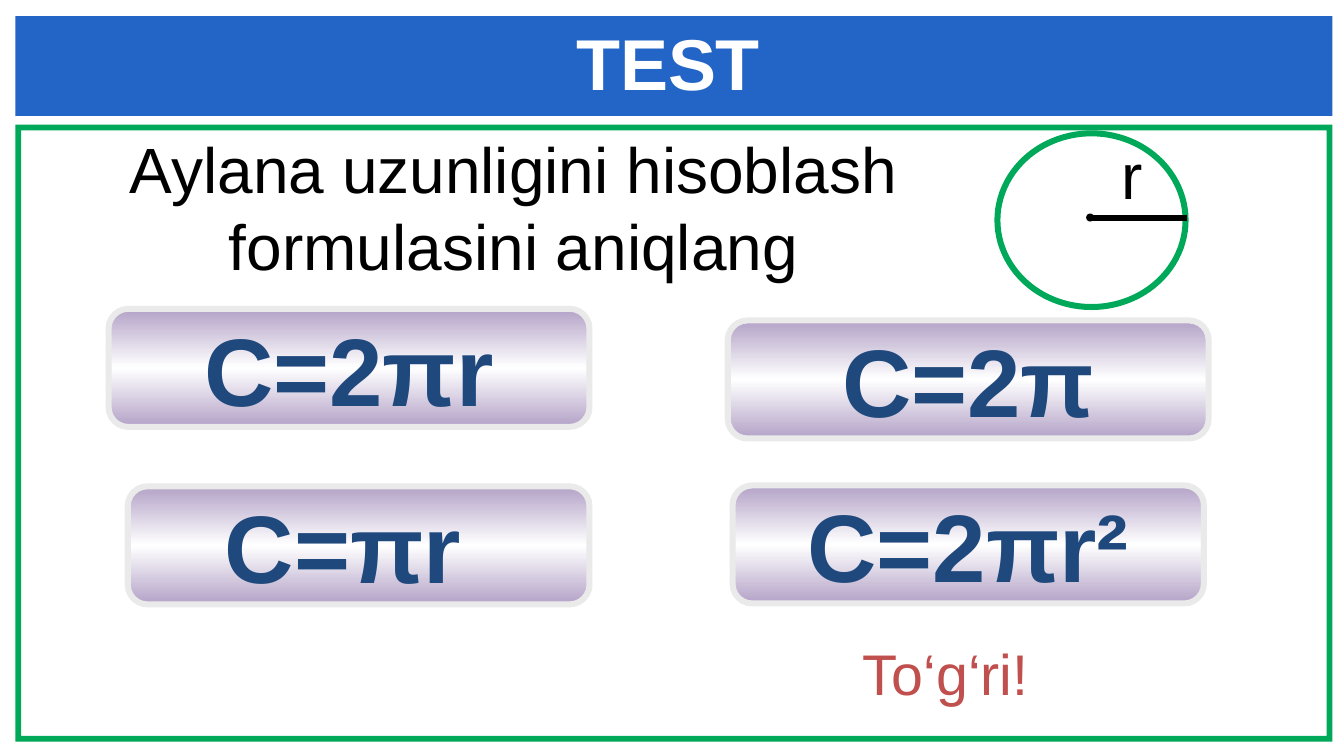
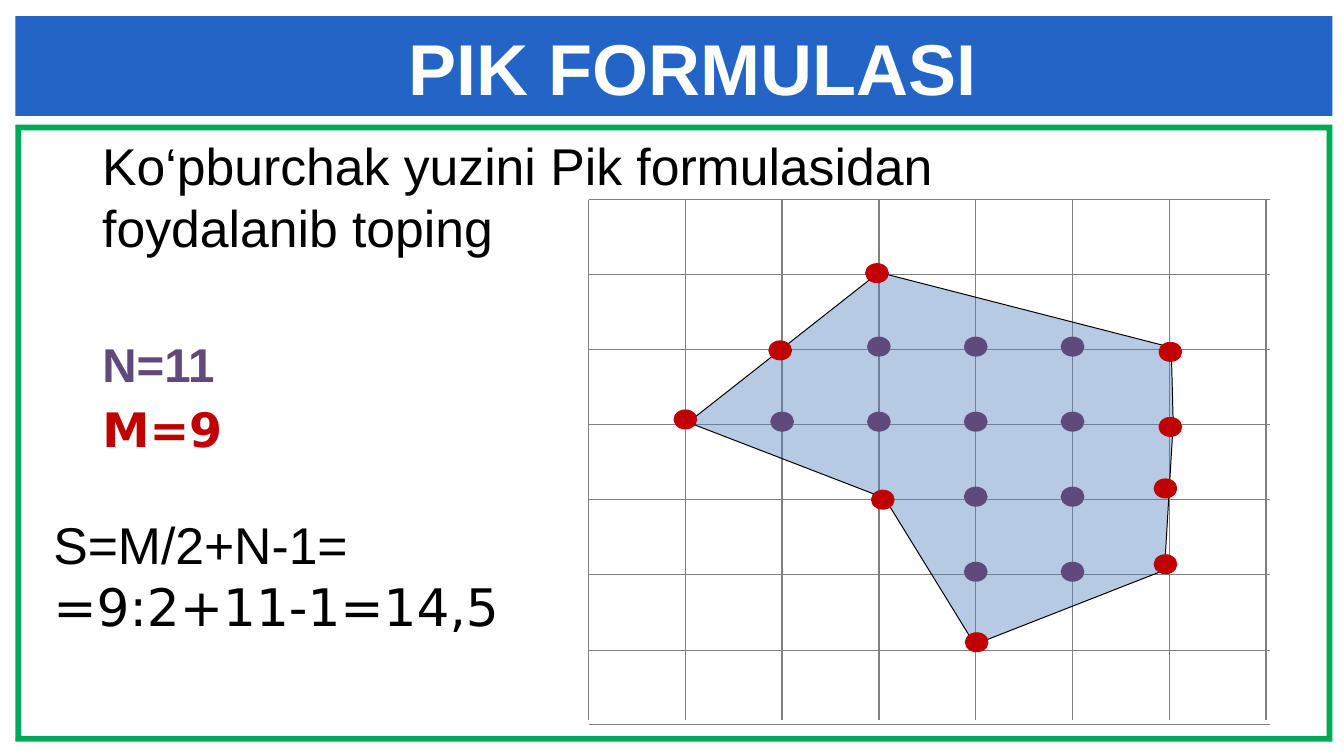
from collections import namedtuple
from dataclasses import dataclass

from lxml.etree import SubElement
from pptx import Presentation
from pptx.dml.color import RGBColor
from pptx.enum.shapes import MSO_CONNECTOR, MSO_SHAPE
from pptx.enum.text import MSO_ANCHOR, MSO_AUTO_SIZE, PP_ALIGN
from pptx.oxml import parse_xml
from pptx.oxml.ns import nsdecls, qn
from pptx.util import Pt

Box = namedtuple("Box", "left top width height")
Style = namedtuple("Style", "size color bold font", defaults=(False, "Arial"))


@dataclass(frozen=True)
class Theme:
    blue: str = "2365C7"
    green: str = "00A859"
    white: str = "FFFFFF"
    black: str = "000000"
    lilac: str = "B3A2C7"
    button_edge: str = "EAEAEA"
    navy: str = "1F497D"
    coral: str = "C0504D"
    grid: str = "808080"
    polygon: str = "4F81BD"
    inner: str = "604A7B"
    border: str = "C00000"
    title_size: float = 54
    question_size: float = 48
    answer_size: float = 72
    verdict_size: float = 43
    body_size: float = 38.8
    count_size: float = 35.6
    second_font: str = "DejaVu Sans"


THEME = Theme()
PAGE = Box(0, 0, 1008, 567.36)
BAND = Box(11.5, 12.2, 987.8, 74.9)
FRAME = Box(11.5, 93.6, 987.8, 463)
FRAME_THICKNESS = 4.3


def points(values):
    return [Pt(value) for value in values]


def paint(shape, fill=None, line=None, width=1):
    shape.shadow.inherit = False
    if fill:
        shape.fill.solid()
        shape.fill.fore_color.rgb = RGBColor.from_string(fill)
    if line:
        shape.line.color.rgb = RGBColor.from_string(line)
        shape.line.width = Pt(width)
    else:
        shape.line.fill.background()


def add_preset(page, kind, box, fill=None, line=None, width=1):
    shape = page.shapes.add_shape(kind, *points(box))
    paint(shape, fill, line, width)
    return shape


def add_line(page, start, end, color, width):
    line = page.shapes.add_connector(MSO_CONNECTOR.STRAIGHT, *points(start + end))
    line.line.color.rgb = RGBColor.from_string(color)
    line.line.width = Pt(width)
    SubElement(line.element.spPr, qn("a:effectLst"))


def write(shape, lines, align=PP_ALIGN.LEFT, anchor=MSO_ANCHOR.TOP, insets=(9, 4.3, 9, 4.3)):
    """Fill the shape with one paragraph for each (text, style) pair."""
    frame = shape.text_frame
    frame.word_wrap = True
    frame.auto_size = MSO_AUTO_SIZE.NONE
    frame.vertical_anchor = anchor
    (frame.margin_left, frame.margin_top,
     frame.margin_right, frame.margin_bottom) = points(insets)
    for index, (text, style) in enumerate(lines):
        para = frame.add_paragraph() if index else frame.paragraphs[0]
        para.text = text
        para.alignment = align
        para.font.name = style.font
        para.font.size = Pt(style.size)
        para.font.bold = style.bold
        para.font.color.rgb = RGBColor.from_string(style.color)


def add_text(page, box, lines, align=PP_ALIGN.LEFT):
    write(page.shapes.add_textbox(*points(box)), lines, align)


def add_page(deck, title, title_box, align, top_inset=0):
    """Add a title-only slide with the blue band and the green frame."""
    page = deck.slides.add_slide(deck.slide_layouts[5])
    frame = add_preset(page, MSO_SHAPE.FRAME, FRAME, THEME.green)
    frame.adjustments[0] = FRAME_THICKNESS / FRAME.height
    band = add_preset(page, MSO_SHAPE.RECTANGLE, BAND, THEME.blue)
    heading = page.shapes.title
    for backdrop in (frame, band):
        heading.element.addprevious(backdrop.element)
    heading.left, heading.top, heading.width, heading.height = points(title_box)
    write(heading, [(title, Style(THEME.title_size, THEME.white, True))],
          align, insets=(0, top_inset, 0, 0))
    return page


def add_answer(page, box, formula, indent=None):
    """Draw an answer button; an indent sets its text from the left."""
    button = add_preset(page, MSO_SHAPE.ROUNDED_RECTANGLE, box,
                        line=THEME.button_edge, width=4.5)
    button.adjustments[0] = 0.167
    stops = "".join(
        f'<a:gs pos="{place}"><a:srgbClr val="{color}"/></a:gs>'
        for place, color in ((0, THEME.lilac), (50000, THEME.white), (100000, THEME.lilac)))
    gradient = parse_xml(
        f'<a:gradFill {nsdecls("a")} rotWithShape="1"><a:gsLst>{stops}</a:gsLst>'
        '<a:lin ang="5400000" scaled="1"/></a:gradFill>')
    button.element.spPr.find(qn("a:prstGeom")).addnext(gradient)
    align = PP_ALIGN.LEFT if indent else PP_ALIGN.CENTER
    write(button, [(formula, Style(THEME.answer_size, THEME.navy, True))],
          align, MSO_ANCHOR.MIDDLE, (indent or 9, 4.3, 9, 4.3))


def draw_circle(page, box):
    """Draw the circle with its centre, radius and radius label."""
    middle_x = box.left + box.width / 2 - 1
    middle_y = box.top + box.height / 2 - 2
    add_preset(page, MSO_SHAPE.OVAL, box, THEME.white, THEME.green, 4.5)
    add_preset(page, MSO_SHAPE.OVAL, Box(middle_x - 2, middle_y - 2, 4, 4),
               THEME.black, THEME.black, 2)
    add_line(page, (middle_x, middle_y), (box.left + box.width + 1, middle_y),
             THEME.black, 4.5)
    add_text(page, Box(box.left + 84.2, box.top - 2.9, 36, 65.5),
             [("r", Style(THEME.question_size, THEME.black))])


def build_test(deck):
    page = add_page(deck, "TEST", Box(38.9, 10.8, 924.5, 68.4), PP_ALIGN.CENTER, 2.9)
    question = Style(THEME.question_size, THEME.black)
    add_text(page, Box(35.3, 92.9, 699.8, 125.3),
             [("Aylana uzunligini hisoblash", question),
              ("formulasini aniqlang", question)], PP_ALIGN.CENTER)
    add_answer(page, Box(81.4, 231.8, 360.7, 88.6), "C=2πr")
    add_answer(page, Box(545.8, 240.5, 360.7, 88.6), "C=2π")
    add_answer(page, Box(95.8, 365, 346.3, 88.6), "C=πr", indent=68.6)
    add_answer(page, Box(549.4, 364.3, 353.5, 88.6), "C=2πr²")
    add_text(page, Box(599.8, 474.5, 218.9, 55.4),
             [("To‘g‘ri!", Style(THEME.verdict_size, THEME.coral))], PP_ALIGN.CENTER)
    draw_circle(page, Box(748.1, 100.1, 141.1, 130.3))


def draw_lattice(page, box):
    """Draw the grid, the polygon and its lattice points inside the box."""
    step_x, step_y = 72.6, 56.3
    dot_width, dot_height = 15.8, 13
    row_widths = {6: 0.25}
    column_widths = {0: 0.75, 5: 0.25}
    outline = [(3, 0.97), (1.03, 2.97), (3.06, 3.98), (3.99, 5.93),
               (5.95, 4.94), (6.04, 2.98), (6.02, 1.97)]
    inner_rows = {2: (3, 4, 5), 3: (2, 3, 4, 5), 4: (4, 5), 5: (4, 5)}
    inner_dots = [(column, row - 0.04)
                  for row, columns in inner_rows.items() for column in columns]
    border_dots = [(2.98, 0.98), (1.98, 2.01), (1, 2.93), (3.04, 4), (4.01, 5.9),
                   (5.96, 4.86), (5.96, 3.85), (6.01, 3.03), (6.01, 2.03)]

    def locate(column, row):
        return box.left + column * step_x, box.top + row * step_y

    for row in range(8):
        left, y = locate(0, row)
        add_line(page, (left, y), (left + box.width, y), THEME.grid, row_widths.get(row, 1))
    for column in range(8):
        x, top = locate(column, 0)
        add_line(page, (x, top), (x, top + box.height), THEME.grid,
                 column_widths.get(column, 1))

    corners = [points(locate(*corner)) for corner in outline]
    builder = page.shapes.build_freeform(*corners[0])
    builder.add_line_segments(corners[1:], close=True)
    polygon = builder.convert_to_shape()
    paint(polygon, THEME.polygon, THEME.black, 0.75)
    tint = polygon.element.spPr.find(qn("a:solidFill")).find(qn("a:srgbClr"))
    SubElement(tint, qn("a:alpha"), val="41000")

    for dots, color in ((inner_dots, THEME.inner), (border_dots, THEME.border)):
        for dot in dots:
            x, y = locate(*dot)
            add_preset(page, MSO_SHAPE.OVAL,
                       Box(x - dot_width / 2, y - dot_height / 2, dot_width, dot_height),
                       color, color, 2)


def build_pick(deck):
    page = add_page(deck, "PIK FORMULASI", Box(306.7, 18, 504.7, 65.5), PP_ALIGN.LEFT)
    draw_lattice(page, Box(441.4, 149.8, 511.2, 390.2))
    body = Style(THEME.body_size, THEME.black)
    add_text(page, Box(67.7, 95.8, 787.7, 103.7),
             [("Ko‘pburchak yuzini Pik formulasidan foydalanib toping", body)])
    add_text(page, Box(67.7, 247, 322.6, 52.6),
             [("N=11", Style(THEME.count_size, THEME.inner, True))])
    add_text(page, Box(67.7, 295.9, 259.9, 52.6),
             [("M=9", Style(THEME.count_size, THEME.border, True, THEME.second_font))])
    add_text(page, Box(31, 380.2, 417.6, 103.7),
             [("S=M/2+N-1=", body),
              ("=9:2+11-1=14,5", body._replace(font=THEME.second_font))])


def main():
    deck = Presentation()
    deck.slide_width, deck.slide_height = Pt(PAGE.width), Pt(PAGE.height)
    build_test(deck)
    build_pick(deck)
    deck.save("out.pptx")


if __name__ == "__main__":
    main()
